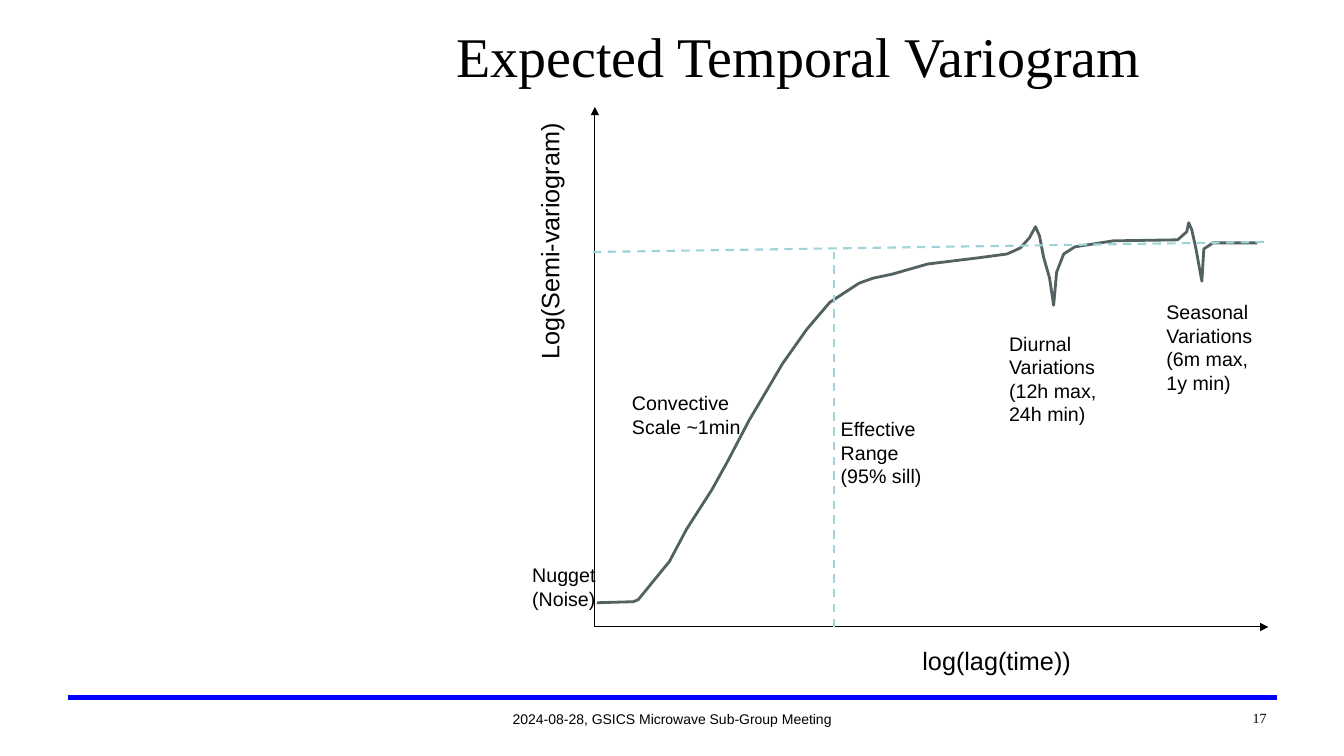
"""Build the temporal variogram slide."""
from lxml import etree
from pptx import Presentation
from pptx import util as u
from pptx.dml.color import RGBColor
from pptx.enum import dml, shapes, text
from pptx.oxml import ns

BLACK = RGBColor(0x00, 0x00, 0x00)
BLUE = RGBColor(0x00, 0x00, 0xFF)
SLATE = RGBColor(0x52, 0x62, 0x63)
AQUA = RGBColor(0x9E, 0xD3, 0xD7)

VARIOGRAM = [
    (5.92, 5.98), (6.28, 5.97), (6.33, 5.95), (6.64, 5.57), (6.81, 5.25),
    (7.06, 4.86), (7.21, 4.59), (7.43, 4.17), (7.59, 3.9), (7.76, 3.61),
    (8, 3.27), (8.23, 3), (8.52, 2.81), (8.66, 2.76), (8.85, 2.72),
    (9.2, 2.62), (9.69, 2.56), (9.99, 2.52), (10.12, 2.46), (10.21, 2.36),
    (10.27, 2.25), (10.31, 2.34), (10.35, 2.55), (10.41, 2.76), (10.45, 3.03),
    (10.48, 2.7), (10.55, 2.52), (10.66, 2.45), (11.04, 2.39), (11.68, 2.38),
    (11.77, 2.3), (11.79, 2.21), (11.82, 2.28), (11.86, 2.46), (11.92, 2.79),
    (11.94, 2.47), (12.03, 2.41), (12.47, 2.41),
]


class Slide:
    """Hold the text style and the current slide."""

    font, color = "Arial", BLACK

    def __init__(self, prs):
        """Add a blank slide."""
        self.s = prs.slides.add_slide(prs.slide_layouts[6])

    def label(self, box, lines, size=14, font=None, align=text.PP_ALIGN.LEFT,
              anchor=text.MSO_ANCHOR.TOP, vert=None):
        """Add a text box with one paragraph per line."""
        sp = self.s.shapes.add_textbox(*map(u.Inches, box))
        tf = sp.text_frame
        tf.word_wrap = True
        tf.vertical_anchor = anchor
        if vert:
            tf._txBody.bodyPr.set("vert", vert)
        for i, line in enumerate(lines):
            p = tf.add_paragraph() if i else tf.paragraphs[0]
            p.alignment = align
            r = p.add_run()
            r.text = line
            r.font.size = u.Pt(size)
            r.font.name = font or self.font
            r.font.color.rgb = self.color
        return tf

    def line(self, start, end, color, width, dashed=False, arrow=False):
        """Add a straight line, optionally dashed or with an arrowhead."""
        sp = self.s.shapes.add_connector(
            shapes.MSO_CONNECTOR.STRAIGHT, *map(u.Inches, start + end))
        sp.line.color.rgb = color
        sp.line.width = u.Pt(width)
        if dashed:
            sp.line.dash_style = dml.MSO_LINE.DASH
        if arrow:
            etree.SubElement(sp.line._get_or_add_ln(), ns.qn("a:tailEnd"), type="triangle")
        etree.SubElement(sp._element.spPr, ns.qn("a:effectLst"))

    def curve(self, points, color, width):
        """Add an open outline through the points."""
        first, *rest = [(u.Inches(x), u.Inches(y)) for x, y in points]
        builder = self.s.shapes.build_freeform(*first)
        builder.add_line_segments(rest, close=False)
        sp = builder.convert_to_shape()
        sp.shadow.inherit = False
        sp.fill.background()
        sp.line.color.rgb = color
        sp.line.width = u.Pt(width)


def main():
    """Draw the slide and save it."""
    prs = Presentation()
    prs.slide_width, prs.slide_height = u.Inches(13.33), u.Inches(7.5)
    s = Slide(prs)
    center, right = text.PP_ALIGN.CENTER, text.PP_ALIGN.RIGHT
    middle, bottom = text.MSO_ANCHOR.MIDDLE, text.MSO_ANCHOR.BOTTOM
    serif = "Times New Roman"

    s.label((3.66, 7.01, 6.01, 0.25), ["2024-08-28, GSICS Microwave Sub-Group Meeting"],
            10, align=center, anchor=middle)
    s.line((0.67, 6.92), (12.67, 6.92), BLUE, 3)
    title = s.label((3.67, 0.15, 8.5, 0.73), ["Expected Temporal Variogram"],
                    40, serif, center, bottom)
    title.margin_bottom = 0
    s.label((10.67, 7, 1.99, 0.25), ["17"], 10, serif, right, middle)

    origin = (5.9, 6.22)
    for tip in ((5.9, 1.06), (12.58, 6.22)):
        s.line(origin, tip, BLACK, 0.75, arrow=True)
    s.curve(VARIOGRAM, SLATE, 2)
    s.label((9.05, 6.35, 2.75, 0.4), ["log(lag(time))"], 18)
    s.label((5.25, 1.06, 0.5, 2.61), ["Log(Semi-variogram)"], 18, vert="vert270")
    s.label((5.18, 5.54, 0.9, 0.57), ["Nugget (Noise)"])
    s.label((8.24, 4.09, 1.04, 0.81), ["Effective Range (95% sill)"])
    s.line((5.88, 2.5), (12.58, 2.4), AQUA, 1.5, dashed=True)
    s.line((8.27, 6.22), (8.27, 2.5), AQUA, 1.5, dashed=True)
    s.label((9.91, 3.24, 1.11, 1.04), ["Diurnal Variations (12h max, 24h min)"])
    s.label((11.47, 2.93, 1.11, 1.04), ["Seasonal Variations (6m max, 1y min)"])
    s.label((6.17, 3.83, 1.36, 0.57), ["Convective", "Scale ~1min"])
    prs.save("out.pptx")


if __name__ == "__main__":
    main()
